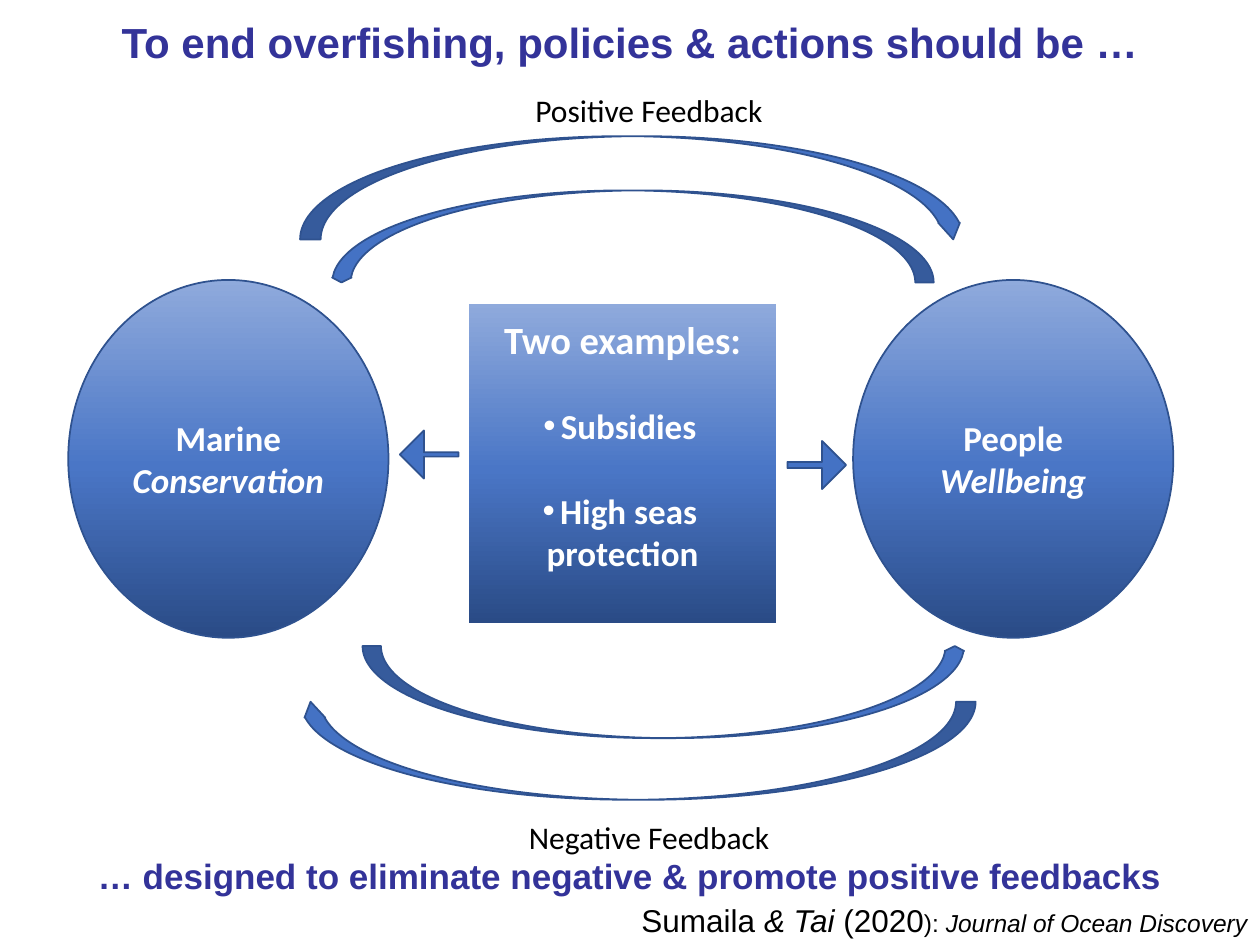
from copy import deepcopy
from dataclasses import dataclass

from lxml.etree import SubElement
from pptx import Presentation
from pptx.dml.color import RGBColor
from pptx.enum.shapes import MSO_SHAPE
from pptx.enum.text import MSO_ANCHOR, PP_ALIGN
from pptx.oxml.ns import qn
from pptx.util import Pt


@dataclass(frozen=True)
class Theme:
    heading_font: str = "Arial"
    body_font: str = "Calibri"
    heading_color: str = "333399"
    text_color: str = "000000"
    light_text: str = "FFFFFF"
    arrow_fill: str = "4472C4"
    outline: str = "2F528F"
    gradient: tuple = ((0, "2A4B86"), (0.48, "4A76C6"), (1, "8FAADC"))
    title_size: int = 24
    panel_title_size: int = 22
    body_size: int = 20
    label_size: int = 18
    small_size: int = 14


def color(value):
    return RGBColor.from_string(value)


class SlideBuilder:
    def __init__(self, slide, theme):
        self.slide = slide
        self.theme = theme

    def format_run(self, run, font, size, text_color, bold=False, italic=False):
        run.font.name = font
        run.font.size = Pt(size)
        run.font.color.rgb = color(text_color)
        run.font.bold = bold
        run.font.italic = italic

    def shape(self, kind, box, outlined=True):
        shape = self.slide.shapes.add_shape(kind, *map(Pt, box))
        shape.shadow.inherit = False
        if outlined:
            shape.line.color.rgb = color(self.theme.outline)
            shape.line.width = Pt(1)
        else:
            shape.line.fill.background()
        return shape

    def arrow(self, kind, box, adjustments, rotation=0):
        shape = self.shape(kind, box)
        shape.fill.solid()
        shape.fill.fore_color.rgb = color(self.theme.arrow_fill)
        shape.rotation = rotation
        for index, value in enumerate(adjustments):
            shape.adjustments[index] = value

    def gradient_shape(self, kind, box, outlined=True):
        shape = self.shape(kind, box, outlined)
        shape.fill.gradient()
        shape.fill.gradient_angle = 90
        stop_list = shape.element.spPr.find(".//" + qn("a:gsLst"))
        stop_list.append(deepcopy(stop_list[-1]))
        for stop, (position, value) in zip(shape.fill.gradient_stops, self.theme.gradient):
            stop.position = position
            stop.color.rgb = color(value)
        return shape

    def circle(self, box, noun, emphasis):
        frame = self.gradient_shape(MSO_SHAPE.OVAL, box).text_frame
        frame.text = f"{noun}\n{emphasis}"
        for paragraph, italic in zip(frame.paragraphs, (False, True)):
            paragraph.alignment = PP_ALIGN.CENTER
            self.format_run(paragraph.runs[0], self.theme.body_font, self.theme.body_size,
                            self.theme.light_text, True, italic)

    def bullet(self, paragraph):
        properties = paragraph._p.get_or_add_pPr()
        properties.set("marL", "0")
        properties.set("indent", str(-Pt(10)))
        bullet_color = SubElement(properties, qn("a:buClr"))
        SubElement(bullet_color, qn("a:srgbClr"), val=self.theme.light_text)
        SubElement(properties, qn("a:buFont"), typeface=self.theme.heading_font)
        SubElement(properties, qn("a:buChar"), char="•")

    def panel(self, box, heading, items):
        frame = self.gradient_shape(MSO_SHAPE.RECTANGLE, box, outlined=False).text_frame
        frame.vertical_anchor = MSO_ANCHOR.TOP
        frame.margin_top = Pt(7)
        frame.text = "\n".join([heading, *items])
        for index, paragraph in enumerate(frame.paragraphs):
            paragraph.alignment = PP_ALIGN.CENTER
            size = self.theme.body_size if index else self.theme.panel_title_size
            self.format_run(paragraph.runs[0], self.theme.body_font, size,
                            self.theme.light_text, True)
            if index:
                paragraph.space_before = Pt(24.4)
                self.bullet(paragraph)

    def text_box(self, box, wrap=True):
        frame = self.slide.shapes.add_textbox(*map(Pt, box)).text_frame
        frame.word_wrap = wrap
        return frame

    def label(self, box, text):
        frame = self.text_box(box, wrap=False)
        frame.text = text
        self.format_run(frame.paragraphs[0].runs[0], self.theme.body_font,
                        self.theme.label_size, self.theme.text_color)

    def headline(self, box, text, size):
        frame = self.text_box(box)
        frame.vertical_anchor = MSO_ANCHOR.MIDDLE
        frame.text = text
        paragraph = frame.paragraphs[0]
        paragraph.alignment = PP_ALIGN.CENTER
        self.format_run(paragraph.runs[0], self.theme.heading_font, size,
                        self.theme.heading_color, True)

    def citation(self, box, parts):
        paragraph = self.text_box(box).paragraphs[0]
        paragraph.alignment = PP_ALIGN.RIGHT
        for text, size, italic in parts:
            run = paragraph.add_run()
            run.text = text
            self.format_run(run, self.theme.heading_font, size,
                            self.theme.text_color, italic=italic)


def main():
    presentation = Presentation()
    presentation.slide_width, presentation.slide_height = Pt(720), Pt(540)
    theme = Theme()
    builder = SlideBuilder(presentation.slides.add_slide(presentation.slide_layouts[6]), theme)

    builder.panel((268, 173.5, 175.5, 182.5), "Two examples:",
                  ["Subsidies", "High seas protection"])
    for left, noun, emphasis in ((39, "Marine", "Conservation"), (487.5, "People", "Wellbeing")):
        builder.circle((left, 160, 183, 204.5), noun, emphasis)

    outer_bend, inner_bend = (0.2, 0.212, 0.162), (0.2, 0.212, 0.054)
    down, up = MSO_SHAPE.CURVED_DOWN_ARROW, MSO_SHAPE.CURVED_UP_ARROW
    builder.arrow(down, (171.5, 77.8, 379.5, 59), outer_bend)
    builder.arrow(down, (171.5, 401, 386, 56), outer_bend, 180)
    builder.arrow(up, (189.5, 108.8, 344, 52.6), inner_bend, 180)
    builder.arrow(up, (207.2, 369.2, 344, 52.6), inner_bend)
    builder.arrow(MSO_SHAPE.LEFT_ARROW, (228.5, 246, 33.5, 27.5), (0.09, 0.5))
    builder.arrow(MSO_SHAPE.RIGHT_ARROW, (450, 252, 33.5, 27.5), (0.128, 0.5))

    builder.label((298.8, 48.2, 146, 29), "Positive Feedback")
    builder.label((295.2, 463.7, 153, 29), "Negative Feedback")
    builder.headline((36, 5.8, 648, 36),
                     "To end overfishing, policies & actions should be …", theme.title_size)
    builder.headline((36, 473, 648, 54.7),
                     "… designed to eliminate negative & promote positive feedbacks",
                     theme.body_size)
    builder.citation((261.4, 511.2, 458.6, 29), [
        ("Sumaila ", theme.label_size, False),
        ("& Tai ", theme.label_size, True),
        ("(2020", theme.label_size, False),
        ("): ", theme.small_size, False),
        ("Journal of Ocean Discovery", theme.small_size, True),
    ])
    presentation.save("out.pptx")


if __name__ == "__main__":
    main()
